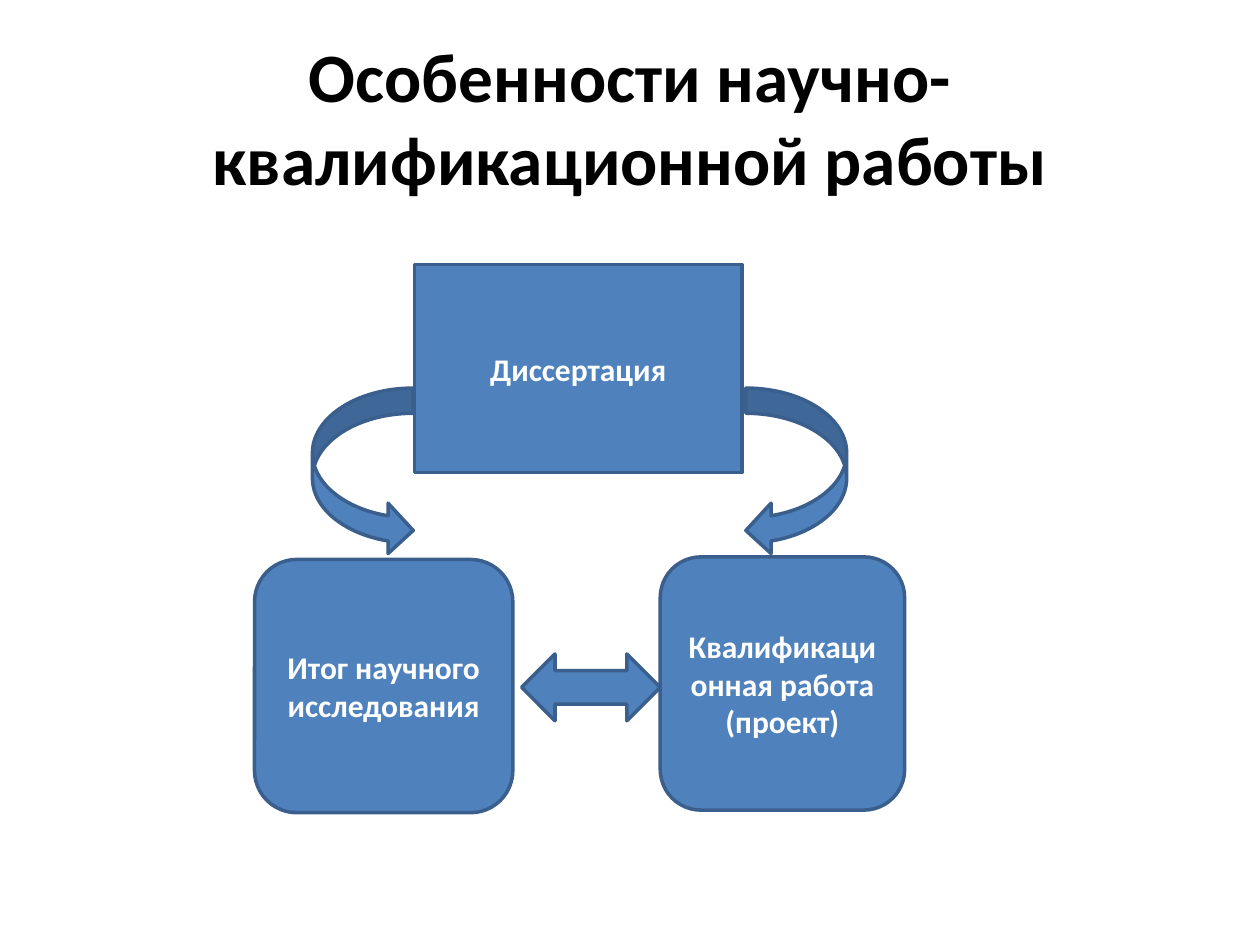
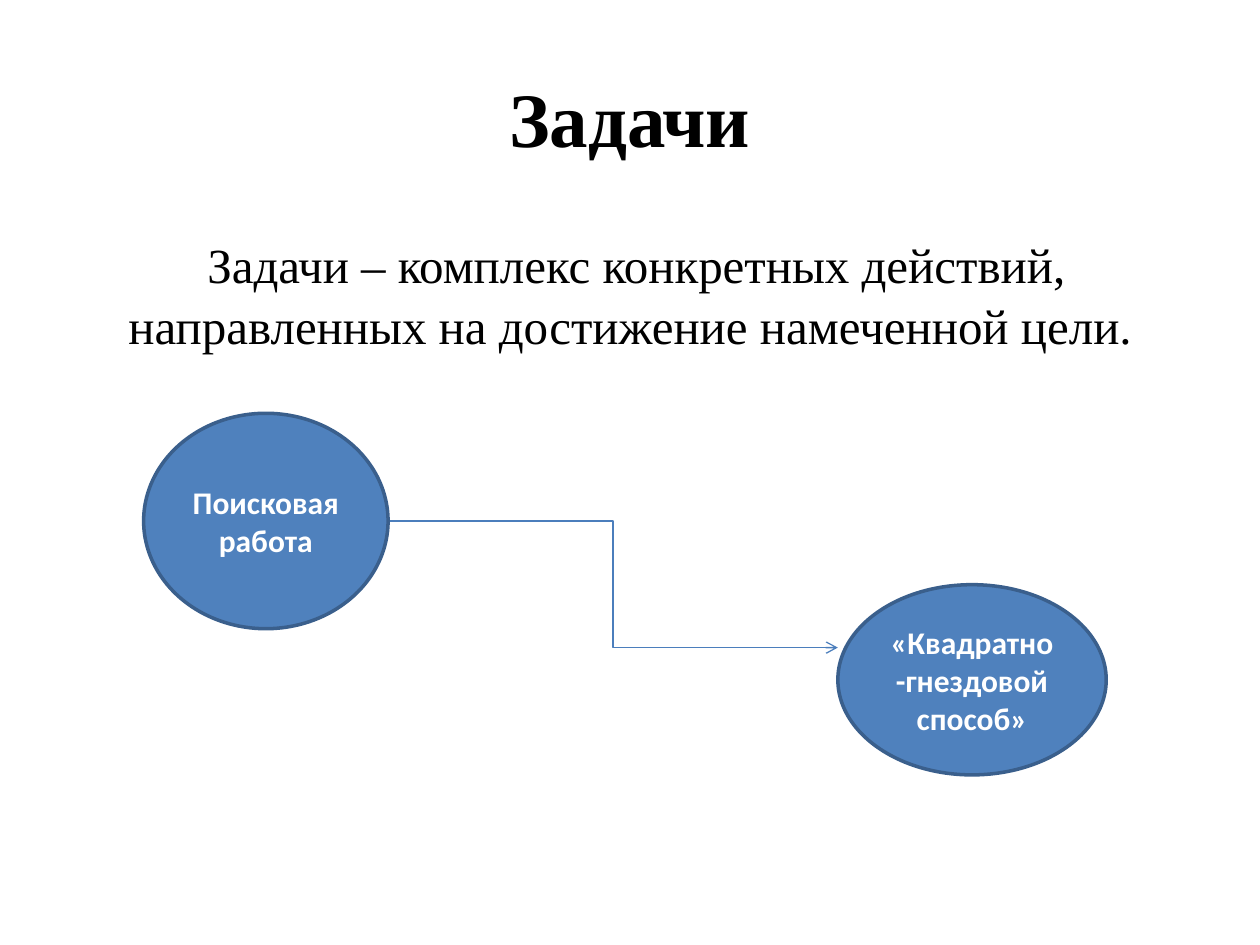
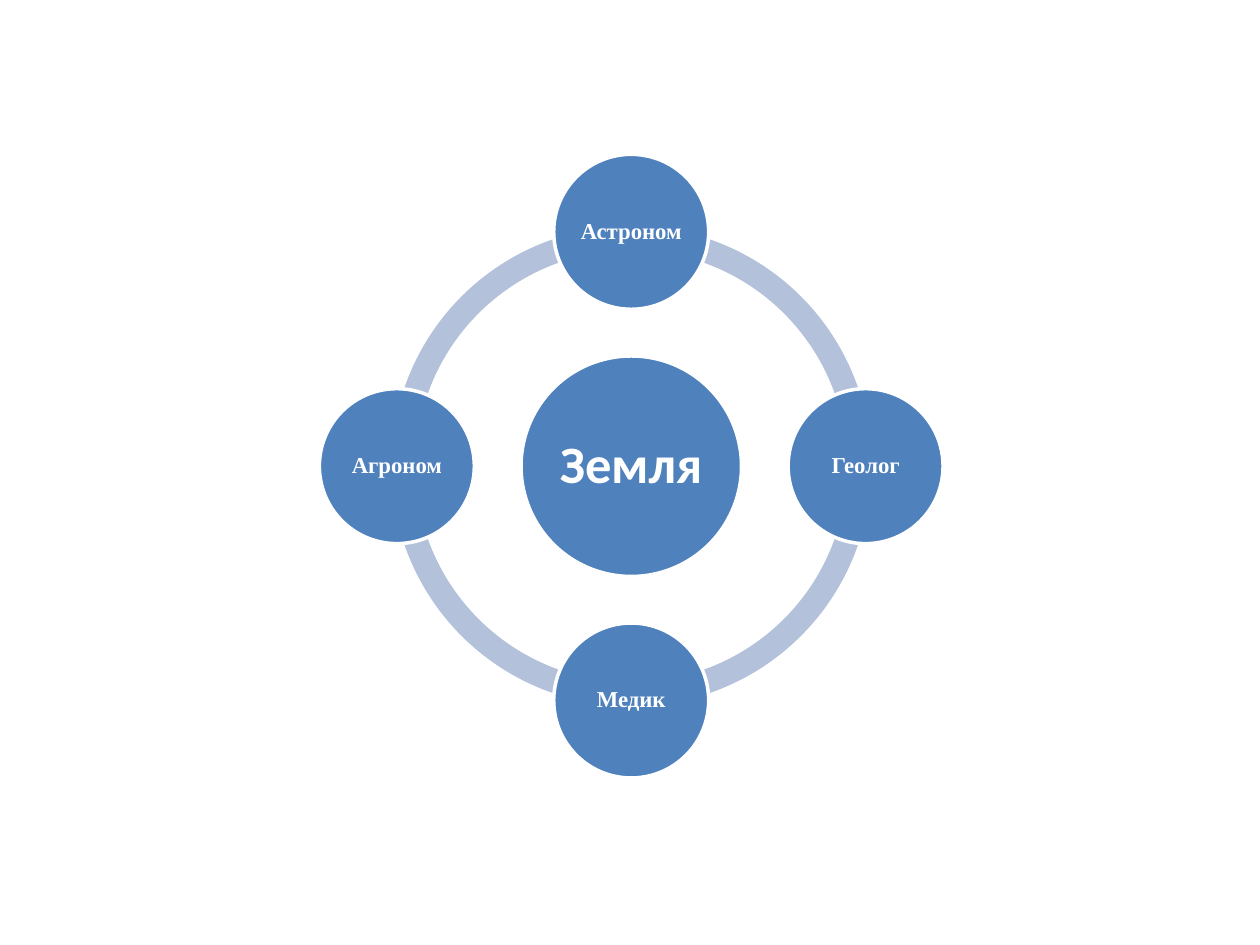
import math

import pptx
import pptx.dml.color
import pptx.enum.shapes
import pptx.enum.text
import pptx.oxml
import pptx.oxml.ns
import pptx.util

RGBColor = pptx.dml.color.RGBColor
Shape = pptx.enum.shapes.MSO_SHAPE
Inches, Pt = pptx.util.Inches, pptx.util.Pt
CENTER = pptx.enum.text.PP_ALIGN.CENTER

# Shared style
BLUE = RGBColor(0x4F, 0x81, 0xBD)
DARK_BLUE = RGBColor(0x3A, 0x5F, 0x8C)
LINE_BLUE = RGBColor(0x4B, 0x7E, 0xBC)
PALE_BLUE = RGBColor(0xB3, 0xC1, 0xDB)
WHITE = RGBColor(0xFF, 0xFF, 0xFF)
BLACK = RGBColor(0, 0, 0)
SANS, SERIF = "Calibri", "Times New Roman"
WIDTH, HEIGHT = Inches(10), Inches(7.5)
TITLE_ONLY, TITLE_AND_BODY, BLANK = 5, 1, 6
LABEL_FONT = {"name": SANS, "size": Pt(18), "bold": True}

# Content: boxes are left, top, width, height in percent of the slide
FEATURES_TITLE = "Особенности научно-квалификационной работы"
FEATURES = [
    (Shape.FLOWCHART_PROCESS, (32.9, 28, 26, 22), "Диссертация"),
    (Shape.CURVED_RIGHT_ARROW, (24.8, 41.07, 8, 17.73), ""),
    (Shape.CURVED_LEFT_ARROW, (59.2, 41.07, 8, 17.73), ""),
    (Shape.FLOWCHART_ALTERNATE_PROCESS, (20.2, 59.2, 20.5, 26.8), "Итог научного исследования"),
    (Shape.FLOWCHART_ALTERNATE_PROCESS, (52.4, 58.93, 19.4, 26.8),
     "Квалификационная работа (проект)"),
    (Shape.LEFT_RIGHT_ARROW, (41.4, 69.2, 11, 7.07), ""),
]

TASKS_TITLE = "Задачи"
TASKS_BODY = "Задачи – комплекс конкретных действий, направленных на достижение намеченной цели."
TASKS = [
    (Shape.OVAL, (11.4, 43.73, 19.4, 22.8), "Поисковая работа"),
    (Shape.OVAL, (66.5, 61.87, 21.3, 20.13), "«Квадратно-гнездовой способ»"),
]
ARROW_END_ROW = 68.53

HUB = "Земля"
PROFESSIONS = ["Астроном", "Геолог", "Медик", "Агроном"]  # clockwise from the top
WHEEL_CENTER = (5.01, 3.7)  # inches, as are the sizes below
ORBIT, RING_SIZE, HUB_SIZE, PROFESSION_SIZE = 1.86, 3.81, 1.75, 1.23
RING_THICKNESS = 0.05
QUARTER = 54  # 90 degrees in adjustment units


def place(shape, box):
    left, top, width, height = box
    shape.left, shape.width = int(WIDTH * left / 100), int(WIDTH * width / 100)
    shape.top, shape.height = int(HEIGHT * top / 100), int(HEIGHT * height / 100)


def write(shape, text, color, font):
    """Fill a shape with one centred paragraph and return that paragraph."""
    frame = shape.text_frame
    frame.word_wrap = True
    frame.auto_size = pptx.enum.text.MSO_AUTO_SIZE.NONE
    paragraph = frame.paragraphs[0]
    paragraph.alignment = CENTER
    run = paragraph.add_run()
    run.text = text
    run.font.color.rgb = color
    for name, value in font.items():
        setattr(run.font, name, value)
    return paragraph


def add_title(slide, text, font):
    title = slide.shapes.title
    place(title, (5, 4, 90, 16.67))
    write(title, text, BLACK, {"bold": True, **font})
    title.text_frame.vertical_anchor = pptx.enum.text.MSO_ANCHOR.MIDDLE


def add_figure(slide, kind, fill, outline=None):
    shape = slide.shapes.add_shape(kind, 0, 0, 0, 0)
    shape.shadow.inherit = False
    shape.fill.solid()
    shape.fill.fore_color.rgb = fill
    if outline is None:
        shape.line.fill.background()
    else:
        shape.line.color.rgb = outline
        shape.line.width = Pt(2)
    return shape


def add_diagram(slide, parts):
    for kind, box, text in parts:
        shape = add_figure(slide, kind, BLUE, DARK_BLUE)
        place(shape, box)
        if text:
            write(shape, text, WHITE, LABEL_FONT)


def add_elbow_arrow(slide, start, end):
    points = [int(size * share / 100)
              for point in (start, end) for size, share in zip((WIDTH, HEIGHT), point)]
    arrow = slide.shapes.add_connector(pptx.enum.shapes.MSO_CONNECTOR.ELBOW, *points)
    arrow.line.color.rgb = LINE_BLUE
    arrow.line.width = Pt(0.75)
    head = pptx.oxml.parse_xml(
        f'<a:tailEnd {pptx.oxml.ns.nsdecls("a")} type="arrow"/>')
    arrow.line._get_or_add_ln().append(head)
    no_effects = pptx.oxml.parse_xml(f'<a:effectLst {pptx.oxml.ns.nsdecls("a")}/>')
    arrow._element.spPr.append(no_effects)


def center_square(shape, center, size):
    shape.left, shape.top = (Inches(middle - size / 2) for middle in center)
    shape.width = shape.height = Inches(size)


def add_circle(slide, center, size, text, font, inset):
    circle = add_figure(slide, Shape.OVAL, BLUE, WHITE)
    center_square(circle, center, size)
    for side in ("left", "right", "top", "bottom"):
        setattr(circle.text_frame, f"margin_{side}", Inches(inset))
    write(circle, text, WHITE, {"bold": True, **font}).line_spacing = 0.9


def build_features(presentation):
    slide = presentation.slides.add_slide(presentation.slide_layouts[TITLE_ONLY])
    add_title(slide, FEATURES_TITLE, {"name": SANS, "size": Pt(39.6)})
    add_diagram(slide, FEATURES)


def build_tasks(presentation):
    slide = presentation.slides.add_slide(presentation.slide_layouts[TITLE_AND_BODY])
    add_title(slide, TASKS_TITLE, {"name": SERIF, "size": Pt(44)})

    # Definition without a bullet
    body = slide.placeholders[1]
    place(body, (5, 23.87, 90, 66))
    paragraph = write(body, TASKS_BODY, BLACK, {"name": SERIF, "size": Pt(28)})
    paragraph.line_spacing = Pt(35)
    paragraph.space_before = Pt(0)
    properties = paragraph._p.get_or_add_pPr()
    properties.set("marL", "0")
    properties.set("indent", str(Inches(0.1)))
    properties.append(pptx.oxml.parse_xml(f'<a:buNone {pptx.oxml.ns.nsdecls("a")}/>'))

    # Arrow from the first oval to the second
    (left, top, width, height), target = TASKS[0][1], TASKS[1][1]
    add_elbow_arrow(slide, (left + width, top + height / 2), (target[0], ARROW_END_ROW))
    add_diagram(slide, TASKS)


def build_wheel(presentation):
    slide = presentation.slides.add_slide(presentation.slide_layouts[BLANK])
    count = len(PROFESSIONS)
    for index in range(count):
        arc = add_figure(slide, Shape.BLOCK_ARC, PALE_BLUE)
        center_square(arc, WHEEL_CENTER, RING_SIZE)
        start, end = (step % count * QUARTER for step in (index, index + 1))
        for position, value in enumerate((start, end, RING_THICKNESS)):
            arc.adjustments[position] = value

    add_circle(slide, WHEEL_CENTER, HUB_SIZE, HUB, {"name": SANS, "size": Pt(30)}, 0.04)
    for index, profession in enumerate(PROFESSIONS):
        angle = 2 * math.pi * index / count
        center = (WHEEL_CENTER[0] + ORBIT * math.sin(angle),
                  WHEEL_CENTER[1] - ORBIT * math.cos(angle))
        add_circle(slide, center, PROFESSION_SIZE, profession,
                   {"name": SERIF, "size": Pt(13)}, 0.02)


def main():
    presentation = pptx.Presentation()
    presentation.slide_width, presentation.slide_height = WIDTH, HEIGHT
    build_features(presentation)
    build_tasks(presentation)
    build_wheel(presentation)
    presentation.save("out.pptx")


if __name__ == "__main__":
    main()
